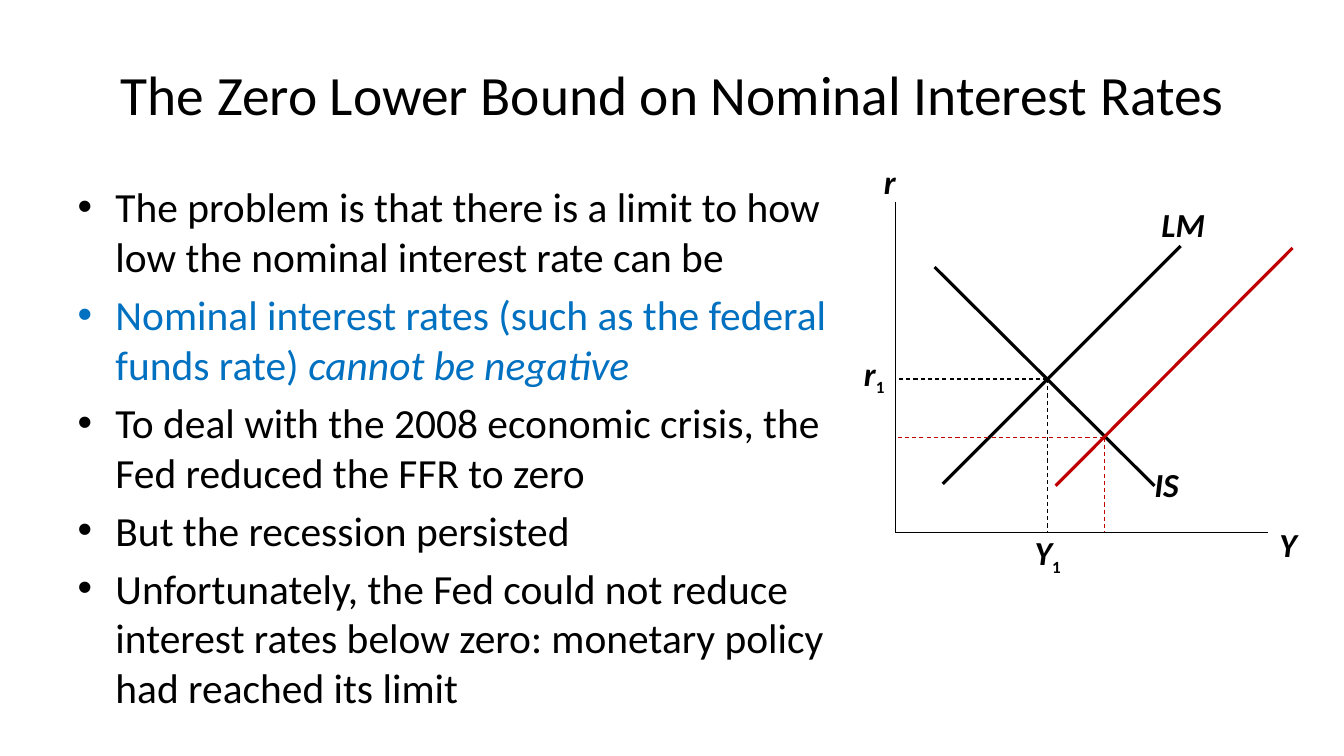
"""Build a slide on the zero lower bound with an IS-LM diagram."""
import dataclasses

import pptx
import pptx.dml.color
import pptx.enum.dml
import pptx.enum.shapes
import pptx.enum.text
import pptx.oxml
import pptx.util

Inches = pptx.util.Inches
Pt = pptx.util.Pt
ALIGN = pptx.enum.text.PP_ALIGN
ANCHOR = pptx.enum.text.MSO_ANCHOR
AUTO_SIZE = pptx.enum.text.MSO_AUTO_SIZE


@dataclasses.dataclass(frozen=True)
class Theme:
    """Colours, font and sizes of the slide."""
    font: str = "Calibri"
    ink: str = "000000"
    highlight: str = "0070C0"
    shifted: str = "C00000"
    title_size: float = 39.6
    body_size: float = 29.6
    label_size: float = 24
    subscript_size: float = 21
    axis_width: float = 1
    curve_width: float = 2.25
    guide_width: float = 0.75


def apply_format(target, values):
    """Set each named attribute on the target."""
    for name, value in values.items():
        setattr(target, name, value)


class SlideBuilder:
    """Draw styled elements on one slide."""

    def __init__(self, slide, theme):
        """Keep the slide and its theme."""
        self.slide = slide
        self.theme = theme

    def add_run(self, paragraph, text, size, color, **values):
        """Append a formatted run to a paragraph."""
        run = paragraph.add_run()
        run.text = text
        apply_format(run.font, {"name": self.theme.font, "size": Pt(size), **values})
        run.font.color.rgb = pptx.dml.color.RGBColor.from_string(color)
        return run

    def place(self, shape, left, top, width, height):
        """Move and size a placeholder."""
        apply_format(shape, {"left": Inches(left), "top": Inches(top),
                             "width": Inches(width), "height": Inches(height)})

    def title(self, text, *box):
        """Fill the title placeholder."""
        shape = self.slide.shapes.title
        self.place(shape, *box)
        apply_format(shape.text_frame, {"auto_size": AUTO_SIZE.NONE,
                                        "vertical_anchor": ANCHOR.MIDDLE})
        paragraph = shape.text_frame.paragraphs[0]
        paragraph.alignment = ALIGN.CENTER
        self.add_run(paragraph, text, self.theme.title_size, self.theme.ink)

    def bullets(self, items, *box):
        """Fill the body placeholder with coloured bullet items."""
        shape = self.slide.placeholders[1]
        self.place(shape, *box)
        frame = shape.text_frame
        frame.auto_size = AUTO_SIZE.NONE
        for index, (color, plain, emphasis) in enumerate(items):
            paragraph = frame.add_paragraph() if index else frame.paragraphs[0]
            self.add_run(paragraph, plain, self.theme.body_size, color)
            if emphasis:
                self.add_run(paragraph, emphasis, self.theme.body_size, color, italic=True)

    def label(self, text, subscript, alignment, *box):
        """Add a bold diagram label with an optional subscript."""
        shape = self.slide.shapes.add_textbox(*map(Inches, box))
        apply_format(shape.text_frame, {"word_wrap": True,
                                        "auto_size": AUTO_SIZE.SHAPE_TO_FIT_TEXT})
        paragraph = shape.text_frame.paragraphs[0]
        paragraph.alignment = alignment
        theme = self.theme
        self.add_run(paragraph, text, theme.label_size, theme.ink, bold=True, italic=True)
        if subscript:
            run = self.add_run(paragraph, subscript, theme.subscript_size, theme.ink, bold=True)
            run.font._element.set("baseline", "-25000")

    def line(self, start, end, width, color, dashed=False):
        """Add a straight line between two points."""
        connector = self.slide.shapes.add_connector(
            pptx.enum.shapes.MSO_CONNECTOR.STRAIGHT, *map(Inches, (*start, *end)))
        connector.line.width = Pt(width)
        connector.line.color.rgb = pptx.dml.color.RGBColor.from_string(color)
        if dashed:
            connector.line.dash_style = pptx.enum.dml.MSO_LINE.DASH
        connector._element.spPr.append(pptx.oxml.parse_xml(
            '<a:effectLst xmlns:a="http://schemas.openxmlformats.org/drawingml/2006/main"/>'))

    def guides(self, x, y, axis_x, axis_y, color):
        """Drop dashed guides from an equilibrium to both axes."""
        for end in ((axis_x, y), (x, axis_y)):
            self.line((x, y), end, self.theme.guide_width, color, dashed=True)


def main():
    """Build and save the presentation."""
    presentation = pptx.Presentation()
    presentation.slide_width = Inches(13.33)
    presentation.slide_height = Inches(7.5)
    theme = Theme()
    slide = presentation.slides.add_slide(presentation.slide_layouts[1])
    builder = SlideBuilder(slide, theme)

    builder.title("The Zero Lower Bound on Nominal Interest Rates", 0.67, 0.3, 12, 1.25)
    builder.bullets([
        (theme.ink, "The problem is that there is a limit to how low the nominal "
                    "interest rate can be", ""),
        (theme.highlight, "Nominal interest rates (such as the federal funds rate) ",
         "cannot be negative"),
        (theme.ink, "To deal with the 2008 economic crisis, the Fed reduced the FFR to zero", ""),
        (theme.ink, "But the recession persisted", ""),
        (theme.ink, "Unfortunately, the Fed could not reduce interest rates below zero: "
                    "monetary policy had reached its limit", ""),
    ], 0.67, 1.75, 7.89, 4.95)

    origin = axis_x, axis_y = 8.88, 5.28
    for end in ((axis_x, 2), (12.58, axis_y)):
        builder.line(origin, end, theme.axis_width, theme.ink)

    for start, end, color in (
        ((9.27, 2.65), (11.45, 4.82), theme.ink),
        ((9.35, 4.8), (11.71, 2.44), theme.ink),
        ((10.47, 4.82), (12.82, 2.46), theme.shifted),
    ):
        builder.line(start, end, theme.curve_width, color)

    for x, y, color in ((10.39, 3.76, theme.ink), (10.95, 4.34, theme.shifted)):
        builder.guides(x, y, axis_x, axis_y, color)

    for text, subscript, alignment, *box in (
        ("IS", "", ALIGN.LEFT, 11.35, 4.55, 0.75, 0.5),
        ("LM", "", ALIGN.LEFT, 11.42, 1.97, 0.85, 0.5),
        ("Y", "", ALIGN.CENTER, 12.46, 5.15, 0.63, 0.5),
        ("r", "", ALIGN.CENTER, 8.6, 1.55, 0.45, 0.5),
        ("r", "1", ALIGN.CENTER, 8.42, 3.45, 0.5, 0.5),
        ("Y", "1", ALIGN.CENTER, 10.1, 5.23, 0.58, 0.5),
    ):
        builder.label(text, subscript, alignment, *box)

    presentation.save("out.pptx")


if __name__ == "__main__":
    main()
